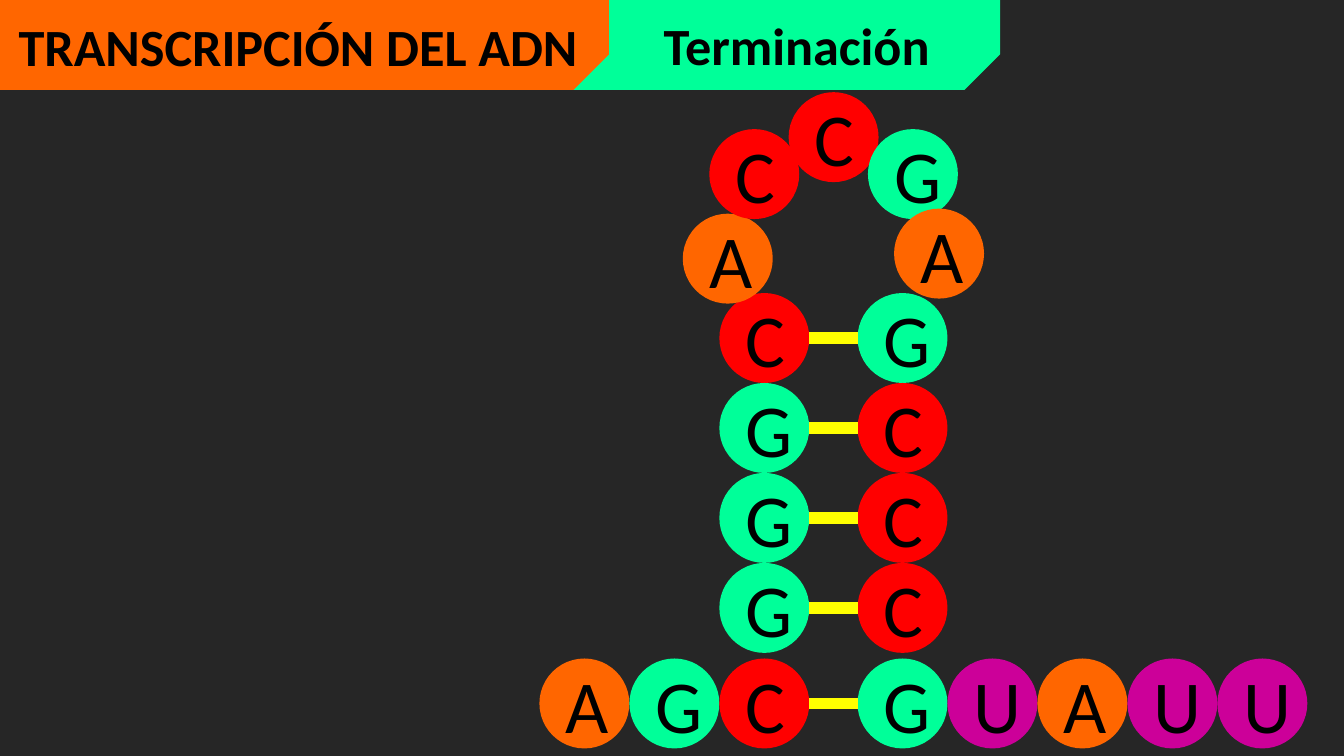
"""Build a slide of an RNA hairpin that ends DNA transcription."""
import pptx
import pptx.dml.color
import pptx.enum.shapes
import pptx.enum.text
import pptx.oxml.ns
import pptx.util
from lxml import etree

Pt = pptx.util.Pt
SHAPES = pptx.enum.shapes.MSO_SHAPE


def color(code):
    return pptx.dml.color.RGBColor.from_string(code)


def write(frame, text, size=40, bold=False, align=None):
    para = frame.paragraphs[0]
    para.alignment = align
    span = para.add_run()
    span.text = text
    span.font.name = "Calibri"
    span.font.size = Pt(size)
    span.font.bold = bold
    span.font.color.rgb = color("000000")


deck = pptx.Presentation()
deck.slide_width, deck.slide_height = Pt(720), Pt(405)
page = deck.slides.add_slide(deck.slide_layouts[6])
page.background.fill.solid()
page.background.fill.fore_color.rgb = color("262626")

for left, width, fill in [(297.4, 238.3, "00FF99"), (0, 326.2, "FF6600")]:
    tab = page.shapes.add_shape(SHAPES.SNIP_1_RECTANGLE, Pt(left), 0, Pt(width), Pt(48.2))
    tab.adjustments[0] = 0.395
    tab.rotation = 180
    tab.element.spPr.xfrm.set("flipH", "1")
    tab.shadow.inherit = False
    tab.fill.solid()
    tab.fill.fore_color.rgb = color(fill)
    tab.line.fill.background()

for text, left, top, width in [("TRANSCRIPCIÓN DEL ADN", 2.9, 4.3, 317.5),
                               ("Terminación", 348.5, 3.6, 158.4)]:
    box = page.shapes.add_textbox(Pt(left), Pt(top), Pt(width), Pt(41))
    box.text_frame.word_wrap = False
    box.text_frame.auto_size = pptx.enum.text.MSO_AUTO_SIZE.SHAPE_TO_FIT_TEXT
    write(box.text_frame, text, size=28, bold=True)

base_fills = {"A": "FF6600", "C": "FF0000", "G": "00FF99", "U": "CC0099"}
diameter = 48.2
left_column, right_column = 385.4, 459.4
strand_top, stem_top = 352.8, 157
stem_rows = [stem_top + diameter * row for row in range(4)]

bases = [(base, left_column + diameter * (step - 2), strand_top)
         for step, base in enumerate("AGC")]
bases += [(base, left_column, top) for base, top in zip("CGGG", stem_rows)]
bases += [(base, right_column, top) for base, top in zip("GCCC", stem_rows)]
bases += [("A", 365.8, 114.5), ("C", 380, 69.2), ("C", 422.5, 49.4),
          ("G", 465, 69.2), ("A", 479, 111.8)]
bases += [(base, right_column + diameter * step, strand_top)
          for step, base in enumerate("GUAUU")]

for base, left, top in bases:
    circle = page.shapes.add_shape(SHAPES.OVAL, Pt(left), Pt(top), Pt(diameter), Pt(diameter))
    circle.shadow.inherit = False
    circle.fill.solid()
    circle.fill.fore_color.rgb = color(base_fills[base])
    circle.line.fill.background()
    circle.text_frame.vertical_anchor = pptx.enum.text.MSO_ANCHOR.MIDDLE
    write(circle.text_frame, base, align=pptx.enum.text.PP_ALIGN.CENTER)

for top in stem_rows + [strand_top]:
    middle = Pt(top + diameter / 2)
    bond = page.shapes.add_connector(pptx.enum.shapes.MSO_CONNECTOR.STRAIGHT,
                                     Pt(left_column + diameter), middle,
                                     Pt(right_column), middle)
    bond.line.color.rgb = color("FFFF00")
    bond.line.width = Pt(6)
    etree.SubElement(bond.element.spPr, pptx.oxml.ns.qn("a:effectLst"))

deck.save("out.pptx")
